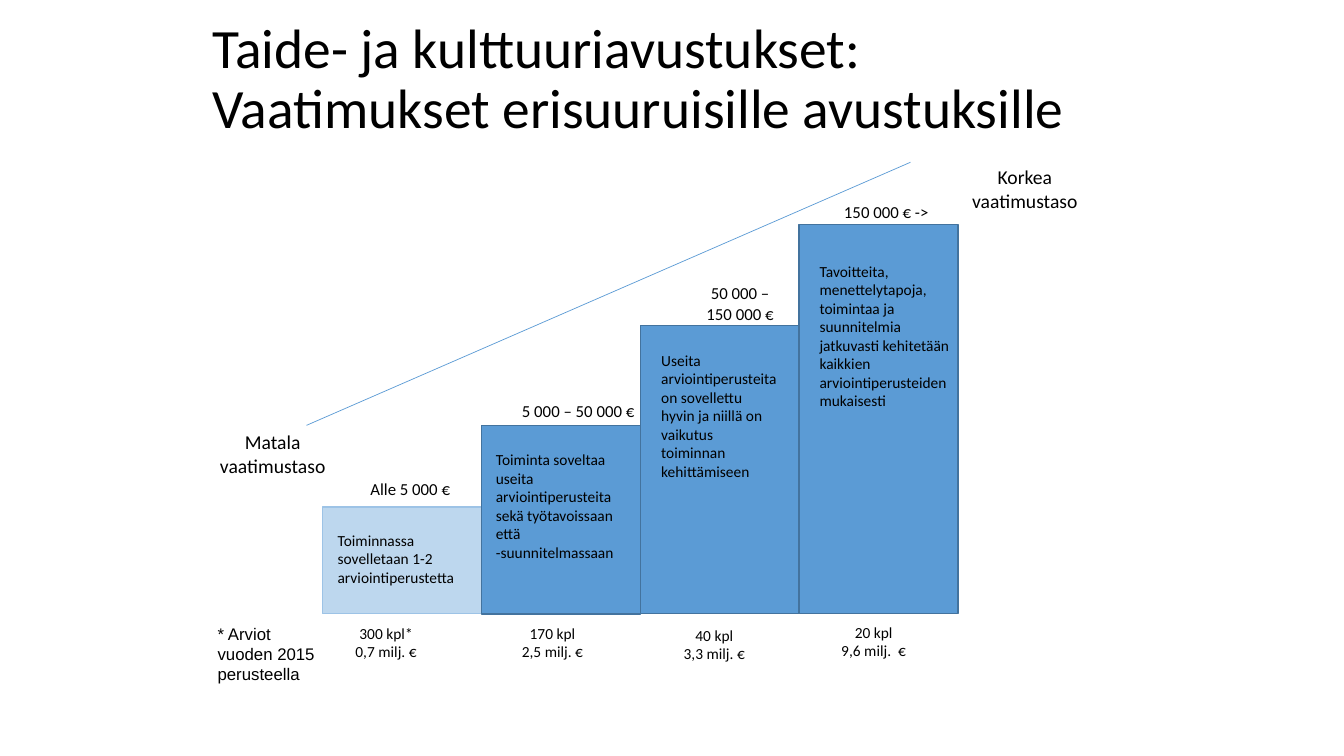
from pptx import Presentation
from pptx.dml.color import RGBColor
from pptx.enum.shapes import MSO_CONNECTOR, MSO_SHAPE
from pptx.enum.text import MSO_ANCHOR, PP_ALIGN
from pptx.oxml.ns import qn
from pptx.util import Inches, Pt
from lxml import etree

LEFT, CENTER = PP_ALIGN.LEFT, PP_ALIGN.CENTER
TOP, MIDDLE = MSO_ANCHOR.TOP, MSO_ANCHOR.MIDDLE
RECT, STRAIGHT = MSO_SHAPE.RECTANGLE, MSO_CONNECTOR.STRAIGHT

COLORS = {
    "text": "000000",
    "low": "BDD7EE", "low_edge": "9DC3E6",
    "step": "5B9BD5", "step_edge": "43739E",
}

TITLE = "Taide- ja kulttuuriavustukset: \nVaatimukset erisuuruisille avustuksille"

# Boxes are (left, top, width, height) in inches.
STEPS = [
    {"top": 5.03, "fill": "low", "edge": "low_edge",
     "amount": ("Alle 5 000 €", (3.52, 4.7, 1.1, 0.3)),
     "demand": ("Toiminnassa sovelletaan 1-2 arviointiperustetta",
                (3.25, 5.22, 1.51, 0.66)),
     "grants": ("300 kpl*\n0,7 milj. €", (3.36, 6.14, 0.94, 0.47))},
    {"top": 4.22, "fill": "step", "edge": "step_edge",
     "amount": ("5 000 – 50 000 €", (5.01, 3.93, 1.45, 0.3)),
     "demand": ("Toiminta soveltaa useita arviointiperusteita sekä "
                "työtavoissaan että \n-suunnitelmassaan",
                (4.82, 4.42, 1.43, 1.21)),
     "grants": ("170 kpl\n2,5 milj. €", (5.01, 6.14, 0.94, 0.47))},
    {"top": 3.23, "fill": "step", "edge": "step_edge",
     "amount": ("50 000 –\n150 000 €", (6.35, 2.76, 1.98, 0.51)),
     "demand": ("Useita arviointiperusteita on sovellettu hyvin ja niillä on "
                "vaikutus toiminnan kehittämiseen",
                (6.46, 3.43, 1.36, 1.21)),
     "grants": ("40 kpl\n3,3 milj. €", (6.61, 6.16, 0.95, 0.47))},
    {"top": 2.23, "fill": "step", "edge": "step_edge",
     "amount": ("150 000 € ->", (8.22, 1.95, 1.14, 0.3)),
     "demand": ("Tavoitteita, menettelytapoja, toimintaa ja suunnitelmia "
                "jatkuvasti kehitetään kaikkien arviointiperusteiden mukaisesti",
                (8.03, 2.55, 1.52, 1.58)),
     "grants": ("20 kpl\n9,6 milj.  €", (8.19, 6.13, 0.95, 0.47))},
]
LEVELS = [
    ("Matala vaatimustaso", (2, 4.22, 1.41, 0.57)),
    ("Korkea vaatimustaso", (9.5, 1.59, 1.33, 0.57)),
]
FOOTNOTE = "* Arviot \nvuoden 2015 perusteella"
TREND = (3.04, 4.22, 9.03, 1.61)

STEP_LEFT, STEP_WIDTH, STEP_BASE = 3.2, 1.575, 6.09


def rgb(name):
    return RGBColor.from_string(COLORS[name])


def add_text(s, text, box, size=12, font="Calibri", align=LEFT, anchor=TOP, spacing=None):
    """Add a wrapped text box; a newline becomes a line break."""
    tf = s.shapes.add_textbox(*map(Inches, box)).text_frame
    tf.word_wrap = True
    tf.vertical_anchor = anchor
    p = tf.paragraphs[0]
    p.text = text.replace("\n", "\v")
    p.alignment = align
    if spacing:
        p.line_spacing = spacing
    for r in p.runs:
        r.font.size = Pt(size)
        r.font.name = font
        r.font.color.rgb = rgb("text")


def add_step(s, index, step):
    sp = s.shapes.add_shape(
        RECT, Inches(STEP_LEFT + index * STEP_WIDTH), Inches(step["top"]),
        Inches(STEP_WIDTH), Inches(STEP_BASE - step["top"]))
    sp.shadow.inherit = False
    sp.fill.solid()
    sp.fill.fore_color.rgb = rgb(step["fill"])
    sp.line.color.rgb = rgb(step["edge"])
    sp.line.width = Pt(1)


def add_trend(s):
    line = s.shapes.add_connector(STRAIGHT, *map(Inches, TREND))
    line.line.color.rgb = rgb("step")
    line.line.width = Pt(0.5)
    etree.SubElement(line._element.spPr, qn("a:effectLst"))


def main():
    prs = Presentation()
    prs.slide_width, prs.slide_height = Inches(13.33), Inches(7.5)
    s = prs.slides.add_slide(prs.slide_layouts[6])

    add_text(s, TITLE, (2.01, 0.17, 9, 1.25), size=39.6, anchor=MIDDLE, spacing=0.9)
    for i, step in enumerate(STEPS):
        add_step(s, i, step)
    for step in STEPS:
        add_text(s, *step["amount"], align=CENTER)
        add_text(s, *step["demand"], size=11)
        add_text(s, *step["grants"], size=11, align=CENTER)
    add_trend(s)
    for text, box in LEVELS:
        add_text(s, text, box, size=14, align=CENTER)
    add_text(s, FOOTNOTE, (2.06, 6.14, 1.89, 0.71), font="Arial")

    prs.save("out.pptx")


if __name__ == "__main__":
    main()
